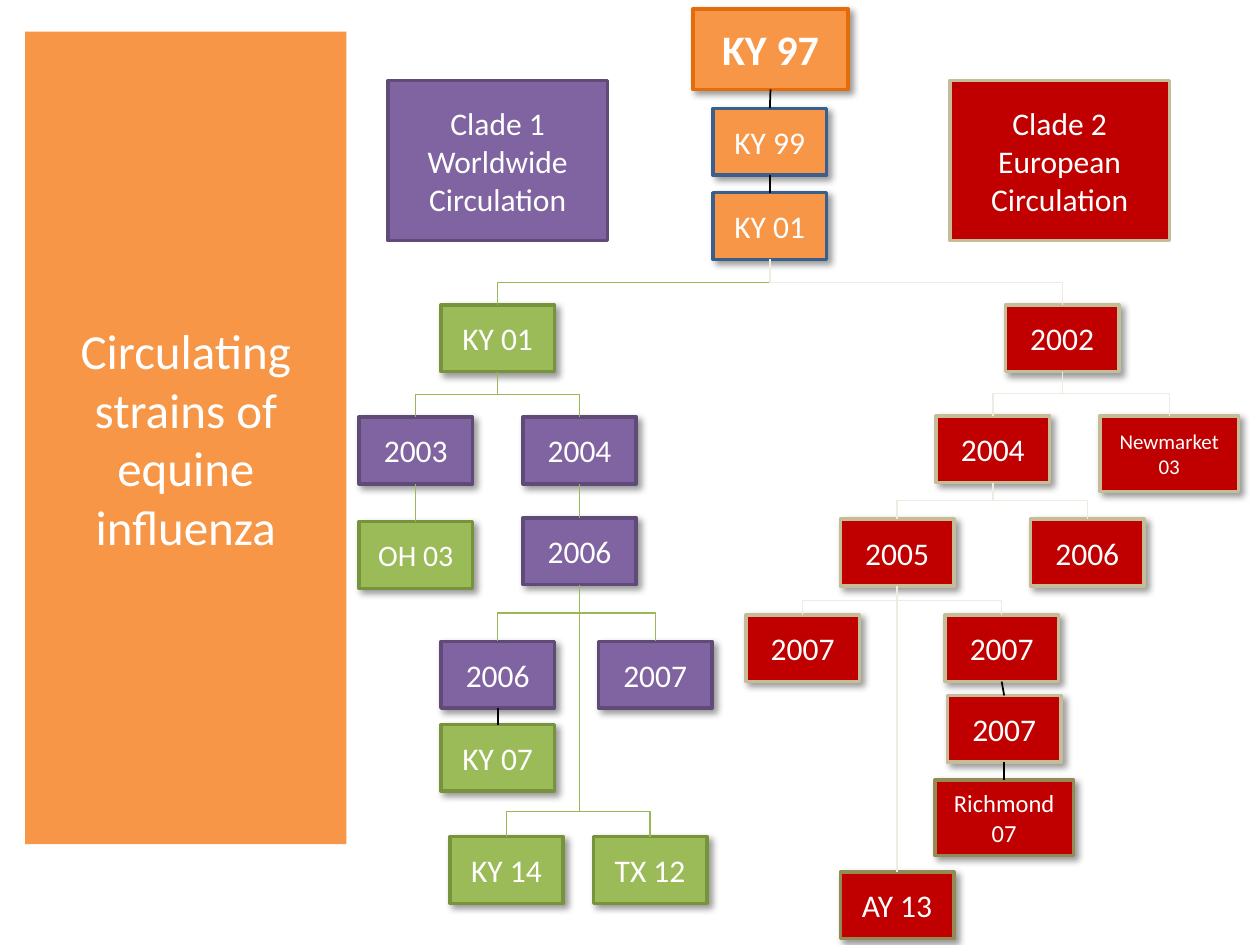
import pptx
import pptx.util
import pptx.dml.color
import pptx.enum.shapes
import pptx.enum.text
import pptx.oxml
import pptx.oxml.ns
from pptx.util import Inches

COLORS = {
    "white": "FFFFFF", "black": "000000", "orange": "F79646",
    "dark orange": "E46C0A", "blue": "3A5F8C", "green": "9BBB59",
    "dark green": "77933C", "green link": "98B955", "purple": "8064A2",
    "dark purple": "5F4A78", "red": "C00000", "tan": "C4BD97",
    "olive": "948A54", "cream": "EEECE1",
}
SHADOW = (
    f'<a:outerShdw {pptx.oxml.ns.nsdecls("a")} blurRad="50800" dist="38100" '
    'dir="2700000" algn="tl" rotWithShape="0"><a:srgbClr val="000000">'
    '<a:alpha val="40000"/></a:srgbClr></a:outerShdw>'
)


def rgb(name):
    return pptx.dml.color.RGBColor.from_string(COLORS[name])


class TreeSlide:
    """Holds the text style and the slide being drawn."""

    font = "Calibri"

    def __init__(self, slide):
        self.slide = slide

    def set_text(self, shape, text, size, bold=False):
        frame = shape.text_frame
        frame.text = text
        frame.word_wrap = True
        frame.vertical_anchor = pptx.enum.text.MSO_ANCHOR.MIDDLE
        paragraph = frame.paragraphs[0]
        paragraph.alignment = pptx.enum.text.PP_ALIGN.CENTER
        paragraph.font.name = self.font
        paragraph.font.size = pptx.util.Pt(size)
        paragraph.font.bold = bold
        paragraph.font.color.rgb = rgb("white")

    def title(self, text, left, top, width, height):
        shape = self.slide.shapes.title
        shape.left, shape.top = Inches(left), Inches(top)
        shape.width, shape.height = Inches(width), Inches(height)
        shape.fill.solid()
        shape.fill.fore_color.rgb = rgb("orange")
        self.set_text(shape, text, 28)
        frame = shape.text_frame
        frame.margin_left = frame.margin_right = Inches(0.1)
        frame.margin_top = frame.margin_bottom = Inches(0.2)

    def box(self, text, left, top, fill, line, width=0.9, height=0.53,
            size=18, bold=False, shadow=True):
        shape = self.slide.shapes.add_shape(
            pptx.enum.shapes.MSO_SHAPE.FLOWCHART_PROCESS,
            Inches(left), Inches(top), Inches(width), Inches(height))
        shape.fill.solid()
        shape.fill.fore_color.rgb = rgb(fill)
        shape.line.color.rgb = rgb(line)
        shape.line.width = pptx.util.Pt(2)
        shape.shadow.inherit = False
        if shadow:
            effects = shape.element.spPr.find(pptx.oxml.ns.qn("a:effectLst"))
            effects.append(pptx.oxml.parse_xml(SHADOW))
        self.set_text(shape, text, size, bold)
        return shape

    def connector(self, kind, ends, color, width):
        connector = self.slide.shapes.add_connector(
            kind, *(int(value) for value in ends))
        connector.line.color.rgb = rgb(color)
        connector.line.width = pptx.util.Pt(width)
        connector.element.spPr.append(
            pptx.oxml.parse_xml(f'<a:effectLst {pptx.oxml.ns.nsdecls("a")}/>'))
        return connector

    @staticmethod
    def ends(parent, child):
        """Bottom centre of the parent and top centre of the child."""
        return (parent.left + parent.width / 2, parent.top + parent.height,
                child.left + child.width / 2, child.top)

    def line(self, parent, child, color="black", width=1):
        self.connector(pptx.enum.shapes.MSO_CONNECTOR.STRAIGHT,
                       self.ends(parent, child), color, width)

    def elbow(self, parent, child, color, bend=0.5):
        x1, y1, x2, y2 = self.ends(parent, child)
        # A vertical elbow is a horizontal one turned about its centre
        run, rise = y2 - y1, abs(x2 - x1)
        left, top = (x1 + x2 - run) / 2, (y1 + y2 - rise) / 2
        connector = self.connector(
            pptx.enum.shapes.MSO_CONNECTOR.ELBOW,
            (left, top, left + run, top + rise), color, 0.75)
        properties = connector.element.spPr
        transform = properties.find(pptx.oxml.ns.qn("a:xfrm"))
        degrees = 90 if x2 < x1 else 270
        transform.set("rot", str(degrees * 60000))
        if x2 > x1:
            transform.set("flipH", "1")
        geometry = properties.find(pptx.oxml.ns.qn("a:prstGeom"))
        geometry.replace(geometry[0], pptx.oxml.parse_xml(
            f'<a:avLst {pptx.oxml.ns.nsdecls("a")}><a:gd name="adj1" '
            f'fmla="val {round(bend * 100000)}"/></a:avLst>'))


def main():
    presentation = pptx.Presentation()
    presentation.slide_width = Inches(10)
    presentation.slide_height = Inches(7.5)
    tree = TreeSlide(
        presentation.slides.add_slide(presentation.slide_layouts[5]))
    tree.title("Circulating strains of equine influenza", 0.2, 0.25, 2.55, 6.45)

    # Box styles: fill and outline
    orange, green = ("orange", "blue"), ("green", "dark green")
    purple, red = ("purple", "dark purple"), ("red", "tan")
    latest_red = ("red", "olive")

    # Common ancestors
    ky97 = tree.box("KY 97", 5.5, 0.07, "orange", "dark orange",
                    1.23, 0.64, size=24, bold=True)
    ky99 = tree.box("KY 99", 5.66, 0.86, *orange)
    ky01 = tree.box("KY 01", 5.66, 1.53, *orange)

    # Clade 1 strains
    clade1 = tree.box("KY 01", 3.5, 2.42, *green)
    c1_2003 = tree.box("2003", 2.85, 3.31, *purple)
    c1_2004 = tree.box("2004", 4.15, 3.31, *purple)
    oh03 = tree.box("OH 03", 2.85, 4.14, *green, size=17)
    c1_2006 = tree.box("2006", 4.15, 4.11, *purple)
    c1_2006_late = tree.box("2006", 3.5, 5.09, *purple)
    c1_2007 = tree.box("2007", 4.75, 5.09, *purple)
    ky07 = tree.box("KY 07", 3.5, 5.75, *green)
    ky14 = tree.box("KY 14", 3.57, 6.64, *green)
    tx12 = tree.box("TX 12", 4.71, 6.64, *green)

    # Clade 2 strains
    clade2 = tree.box("2002", 7.98, 2.42, *red)
    c2_2004 = tree.box("2004", 7.43, 3.3, *red)
    newmarket = tree.box("Newmarket 03", 8.73, 3.3, *red, 1.1, 0.6, size=12)
    c2_2005 = tree.box("2005", 6.67, 4.12, *red)
    c2_2006 = tree.box("2006", 8.18, 4.12, *red)
    c2_2007_left = tree.box("2007", 5.92, 4.88, *red)
    c2_2007_right = tree.box("2007", 7.5, 4.88, *red)
    c2_2007_late = tree.box("2007", 7.52, 5.52, *red)
    richmond = tree.box("Richmond 07", 7.42, 6.19, *latest_red, 1.1, 0.6,
                        size=14)
    ay13 = tree.box("AY 13", 6.67, 6.92, *latest_red)

    # Direct descent
    for parent, child in [(ky97, ky99), (ky99, ky01), (c1_2006_late, ky07),
                          (c2_2007_right, c2_2007_late),
                          (c2_2007_late, richmond)]:
        tree.line(parent, child)
    for parent, child, color in [(c1_2003, oh03, "green link"),
                                 (c1_2004, c1_2006, "green link"),
                                 (c2_2005, ay13, "cream")]:
        tree.line(parent, child, color, 0.75)

    # Branches
    branches = {
        "green link": [(ky01, [clade1]), (clade1, [c1_2003, c1_2004]),
                       (c1_2006, [c1_2006_late, c1_2007])],
        "cream": [(ky01, [clade2]), (clade2, [c2_2004, newmarket]),
                  (c2_2004, [c2_2005, c2_2006]),
                  (c2_2005, [c2_2007_left, c2_2007_right])],
    }
    for color, forks in branches.items():
        for parent, children in forks:
            for child in children:
                tree.elbow(parent, child, color)
    for child in (ky14, tx12):
        tree.elbow(c1_2006, child, "green link", bend=0.9)

    # Clade labels
    for text, left, style in [("Clade 1 Worldwide Circulation", 3.08, purple),
                              ("Clade 2 European Circulation", 7.54, red)]:
        tree.box(text, left, 0.64, *style, 1.74, 1.27, shadow=False)

    presentation.save("out.pptx")


if __name__ == "__main__":
    main()
